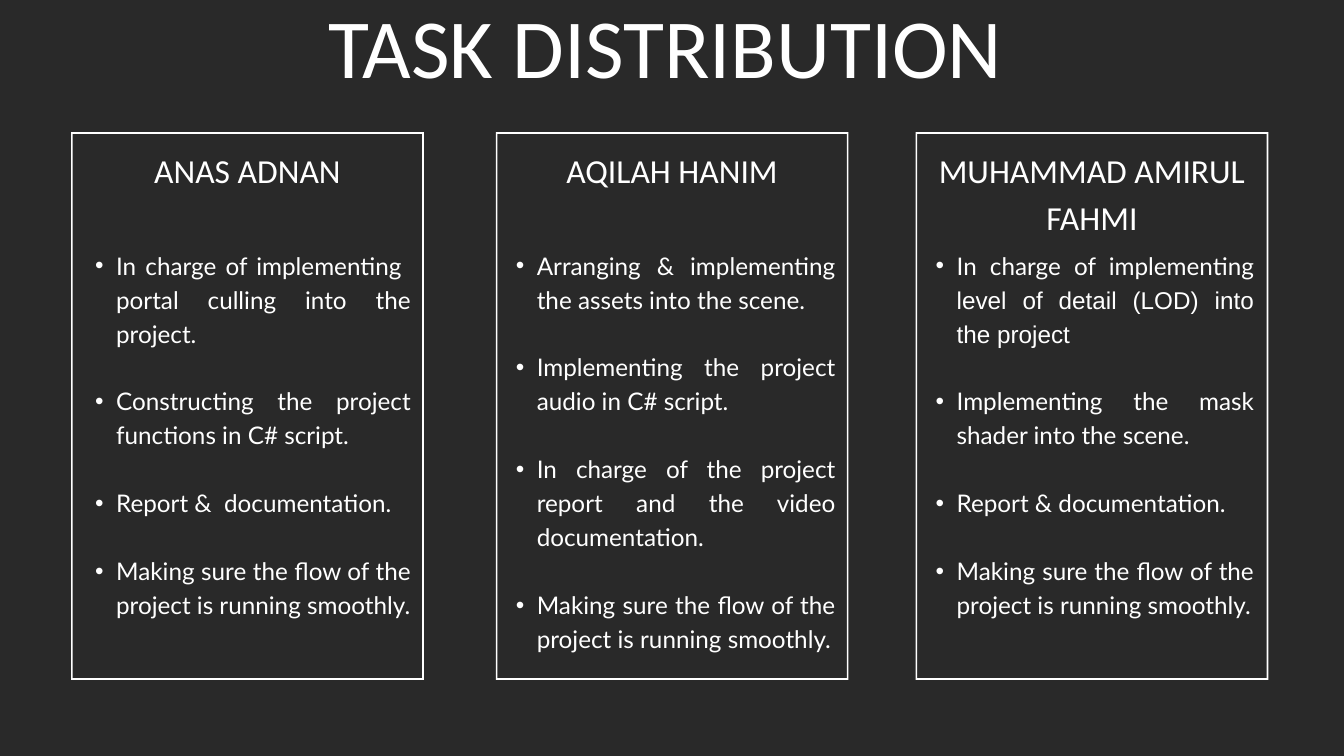
from dataclasses import dataclass

from lxml.etree import SubElement
from pptx import Presentation
from pptx.dml.color import RGBColor
from pptx.enum.text import MSO_AUTO_SIZE as AutoSize, PP_ALIGN as Align
from pptx.oxml.ns import qn
from pptx.slide import Slide
from pptx.text.text import TextFrame, _Paragraph as Paragraph
from pptx.util import Cm, Pt

COLORS = {"background": "292929", "light": "FFFFFF"}
HEADING_FONT = "Calibri"
TASK_FONT = "Lato"
FRAME_TOP, FRAME_WIDTH, FRAME_HEIGHT, FRAME_BORDER = 5, 13.33, 20.7, 0.06
NAME_TOP, NAME_HEIGHT = 5.41, 1.8
TASKS_TOP = 9.3
TASK_LINE = Pt(36.4)
SMOOTH_FLOW = "Making sure the flow of the project is running smoothly."


@dataclass(frozen=True)
class Run:
    text: str
    font: str = TASK_FONT


@dataclass(frozen=True)
class Member:
    name: str
    left: float
    name_width: float
    tasks_left: float
    tasks_width: float
    tasks_height: float
    tasks: tuple[tuple[Run, ...], ...]


MEMBERS = (
    Member("ANAS ADNAN", 2.69, 9.5, 2.84, 12.7, 16.6, (
        (Run("In charge of implementing  portal culling into the project."),),
        (Run("Constructing the project functions in C# script."),),
        (Run("Report &  documentation."),),
        (Run(SMOOTH_FLOW),),
    )),
    Member("AQILAH HANIM", 18.74, 9.5, 18.74, 12.85, 16.5, (
        (Run("Arranging & implementing the assets into the scene."),),
        (Run("Implementing the project audio in C# script."),),
        (Run("In charge of the project report and the video documentation."),),
        (Run(SMOOTH_FLOW),),
    )),
    Member("MUHAMMAD AMIRUL FAHMI", 34.61, FRAME_WIDTH, 34.61, 12.8, 15.24, (
        (Run("In charge of implementing"),
         Run(" level of detail (LOD) into the project", "Arial")),
        (Run("Implementing the mask shader into the scene."),),
        (Run("Report & documentation."),),
        (Run(SMOOTH_FLOW),),
    )),
)


def color(name: str) -> RGBColor:
    return RGBColor.from_string(COLORS[name])


def corners(left: float, inset: float) -> list[tuple[int, int]]:
    x1, x2 = Cm(left + inset), Cm(left + FRAME_WIDTH - inset)
    y1, y2 = Cm(FRAME_TOP + inset), Cm(FRAME_TOP + FRAME_HEIGHT - inset)
    return [(x1, y1), (x1, y2), (x2, y2), (x2, y1)]


def add_frame(slide: Slide, left: float) -> None:
    outer = corners(left, 0)
    inner = corners(left, FRAME_BORDER)[::-1]
    builder = slide.shapes.build_freeform(*outer[0])
    builder.add_line_segments(outer[1:], close=True)
    builder.move_to(*inner[0])
    builder.add_line_segments(inner[1:], close=True)
    shape = builder.convert_to_shape()
    shape.shadow.inherit = False
    shape.fill.solid()
    shape.fill.fore_color.rgb = color("light")
    shape.line.fill.background()


def add_text_frame(slide: Slide, left: float, top: float, width: float, height: float) -> TextFrame:
    box = slide.shapes.add_textbox(Cm(left), Cm(top), Cm(width), Cm(height))
    frame = box.text_frame
    frame.margin_left = frame.margin_top = frame.margin_right = frame.margin_bottom = 0
    frame.word_wrap = True
    frame.auto_size = AutoSize.SHAPE_TO_FIT_TEXT
    return frame


def add_run(paragraph: Paragraph, text: str, font: str, size: float) -> None:
    run = paragraph.add_run()
    run.text = text
    run.font.name = font
    run.font.size = Pt(size)
    run.font.color.rgb = color("light")


def add_heading(slide: Slide, text: str, left: float, top: float,
                width: float, height: float, size: float) -> None:
    paragraph = add_text_frame(slide, left, top, width, height).paragraphs[0]
    paragraph.alignment = Align.CENTER
    paragraph.line_spacing = Pt(size * 1.4)
    add_run(paragraph, text, HEADING_FONT, size)


def add_bullet(paragraph: Paragraph) -> None:
    properties = paragraph._p.get_or_add_pPr()
    properties.set("marL", str(Cm(1.55)))
    properties.set("indent", str(Cm(-0.79)))
    SubElement(properties, qn("a:buFont"), typeface="Arial")
    SubElement(properties, qn("a:buChar"), char="•")


def add_tasks(slide: Slide, member: Member) -> None:
    frame = add_text_frame(slide, member.tasks_left, TASKS_TOP,
                           member.tasks_width, member.tasks_height)
    for index, task in enumerate(member.tasks):
        paragraph = frame.add_paragraph() if index else frame.paragraphs[0]
        paragraph.alignment = Align.JUSTIFY
        paragraph.level = 1
        paragraph.line_spacing = TASK_LINE
        paragraph.space_before = TASK_LINE if index else Pt(0)
        add_bullet(paragraph)
        for run in task:
            add_run(paragraph, run.text, run.font, 26)


def main() -> None:
    presentation = Presentation()
    presentation.slide_width = Cm(50.8)
    presentation.slide_height = Cm(28.58)
    slide = presentation.slides.add_slide(presentation.slide_layouts[6])
    slide.background.fill.solid()
    slide.background.fill.fore_color.rgb = color("background")

    add_heading(slide, "TASK DISTRIBUTION", 10.26, -0.84, 29.8, 4.5, 90)
    for member in MEMBERS:
        add_frame(slide, member.left)
        name_left = member.left + (FRAME_WIDTH - member.name_width) / 2
        add_heading(slide, member.name, name_left, NAME_TOP,
                    member.name_width, NAME_HEIGHT, 36)
        add_tasks(slide, member)
    presentation.save("out.pptx")


if __name__ == "__main__":
    main()
